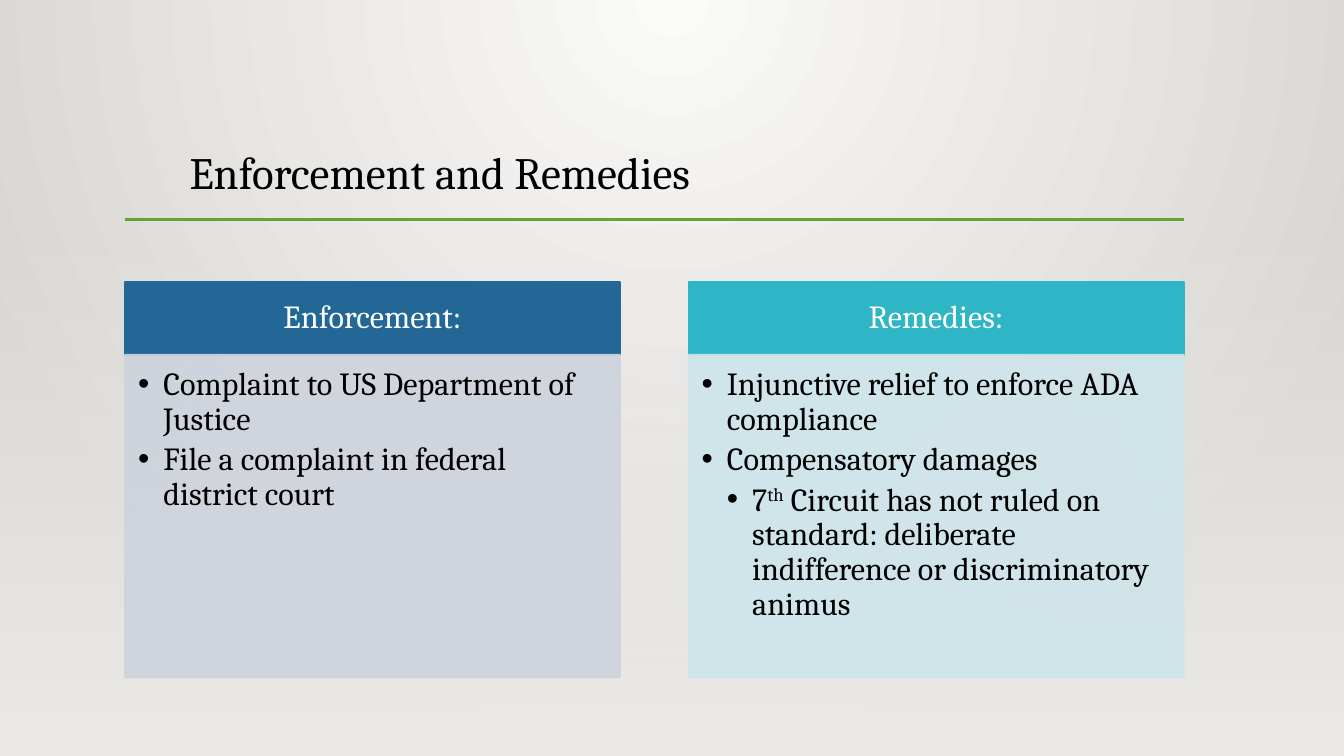
import lxml.etree
import pptx
import pptx.chart.data
import pptx.dml.color
import pptx.enum.shapes
import pptx.enum.text
import pptx.oxml.ns
import pptx.util

TITLE = "Enforcement and Remedies"
PANELS = [
    ("Enforcement:", "blue", "pale_blue", [
        (1, [("Complaint to US Department of Justice", False)]),
        (1, [("File a complaint in federal district court", False)]),
    ]),
    ("Remedies:", "teal", "pale_teal", [
        (1, [("Injunctive relief to enforce ADA compliance", False)]),
        (1, [("Compensatory damages", False)]),
        (2, [("7", False), ("th", True),
             (" Circuit has not ruled on standard: deliberate indifference "
              "or discriminatory animus", False)]),
    ]),
]
COLORS = {
    "black": "000000", "white": "FFFFFF", "green": "5FA534",
    "light": "FAFAF9", "grey": "D7D5D2", "floor": "EDEBE7",
    "blue": "236797", "pale_blue": "CDD3DD",
    "teal": "2FB6C6", "pale_teal": "CEE5EA",
}
FONT = "Cambria"
Inches = pptx.util.Inches
ANCHOR = pptx.enum.text.MSO_ANCHOR
ALIGN = pptx.enum.text.PP_ALIGN
WIDTH, HEIGHT = 13.33, 7.5
LEFT, RIGHT, PANEL_WIDTH = 1.24, 11.74, 4.91
HEAD_TOP, HEAD_HEIGHT, BODY_HEIGHT = 2.8, 0.72, 3.2
BULLET_INDENT = 0.25


def rgb(name):
    return pptx.dml.color.RGBColor.from_string(COLORS[name])


def add_tag(parent, tag, **attributes):
    return lxml.etree.SubElement(parent, pptx.oxml.ns.qn(tag), attributes)


def set_alpha(color_element, percent):
    add_tag(color_element, "a:alpha", val=str(percent * 1000))


def color_elements(parent):
    return list(parent.iter(pptx.oxml.ns.qn("a:srgbClr")))


def paint_gradient(fill, parent, start, end, radial):
    fill.gradient()
    for stop, name, position in zip(fill.gradient_stops, (start, end), (0, 1)):
        stop.color.rgb = rgb(name)
        stop.position = position
    if not radial:
        fill.gradient_angle = 270
        return
    gradient = next(parent.iter(pptx.oxml.ns.qn("a:gradFill")))
    gradient.remove(gradient.find(pptx.oxml.ns.qn("a:lin")))
    circle = add_tag(gradient, "a:path", path="circle")
    add_tag(circle, "a:fillToRect", l="43000", t="0", r="43000", b="100000")


def add_rectangle(page, left, top, width, height):
    box = page.shapes.add_shape(
        pptx.enum.shapes.MSO_SHAPE.RECTANGLE,
        Inches(left), Inches(top), Inches(width), Inches(height))
    box.shadow.inherit = False
    box.line.fill.background()
    return box


def add_panel(page, left, top, height, color, alpha=100):
    box = add_rectangle(page, left, top, PANEL_WIDTH, height)
    box.fill.solid()
    box.fill.fore_color.rgb = rgb(color)
    box.line.color.rgb = rgb(color)
    box.line.width = pptx.util.Pt(1.25)
    if alpha < 100:
        for element in color_elements(box.element.spPr):
            set_alpha(element, alpha)
    return box


def set_frame(box, anchor, insets):
    frame = box.text_frame
    frame.word_wrap = True
    frame.vertical_anchor = anchor
    (frame.margin_left, frame.margin_top,
     frame.margin_right, frame.margin_bottom) = map(Inches, insets)
    return frame


def write(para, text, size=23, color="black", align=ALIGN.LEFT, superscript=False):
    para.alignment = align
    para.line_spacing = 0.9
    span = para.add_run()
    span.text = text
    span.font.name = FONT
    span.font.size = pptx.util.Pt(size)
    span.font.color.rgb = rgb(color)
    if superscript:
        span.font._element.set("baseline", "30000")


def write_bullets(frame, items):
    for index, (level, spans) in enumerate(items):
        para = frame.add_paragraph() if index else frame.paragraphs[0]
        para.level = level
        para.space_after = pptx.util.Pt(4)
        for text, superscript in spans:
            write(para, text, superscript=superscript)
        properties = para._p.get_or_add_pPr()
        properties.set("marL", str(Inches(BULLET_INDENT * level)))
        properties.set("indent", str(-Inches(BULLET_INDENT)))
        add_tag(properties, "a:buFont", typeface="Arial")
        add_tag(properties, "a:buChar", char="•")


def main():
    """Build the slide on enforcement and remedies."""
    deck = pptx.Presentation()
    deck.slide_width, deck.slide_height = Inches(WIDTH), Inches(HEIGHT)
    page = deck.slides.add_slide(deck.slide_layouts[6])
    paint_gradient(page.background.fill, page.element, "light", "grey", True)

    backdrop = add_rectangle(page, 0, 0, WIDTH, HEIGHT)
    paint_gradient(backdrop.fill, backdrop.element, "light", "grey", True)

    title = page.shapes.add_textbox(
        Inches(1.68), Inches(0.88), Inches(10.41), Inches(1.15))
    frame = set_frame(title, ANCHOR.BOTTOM, (0.2, 0.05, 0.1, 0.05))
    write(frame.paragraphs[0], TITLE, size=32)

    rule = page.shapes.add_connector(
        pptx.enum.shapes.MSO_CONNECTOR.STRAIGHT,
        Inches(LEFT), Inches(2.18), Inches(RIGHT), Inches(2.18))
    rule.line.color.rgb = rgb("green")
    rule.line.width = pptx.util.Pt(2.5)
    add_tag(rule._element.spPr, "a:effectLst")

    floor = add_rectangle(page, 0, 2.21, WIDTH, HEIGHT - 2.21)
    paint_gradient(floor.fill, floor.element, "floor", "floor", False)
    set_alpha(color_elements(floor.element.spPr)[0], 0)

    step = RIGHT - PANEL_WIDTH - LEFT
    for index, (heading, dark, pale, items) in enumerate(PANELS):
        left = LEFT + index * step
        head = add_panel(page, left, HEAD_TOP, HEAD_HEIGHT, dark)
        frame = set_frame(head, ANCHOR.MIDDLE, (0.18, 0.1, 0.18, 0.1))
        write(frame.paragraphs[0], heading, color="white", align=ALIGN.CENTER)
        body = add_panel(page, left, HEAD_TOP + HEAD_HEIGHT, BODY_HEIGHT, pale, 90)
        frame = set_frame(body, ANCHOR.TOP, (0.13, 0.13, 0.18, 0.2))
        write_bullets(frame, items)

    deck.save("out.pptx")


if __name__ == "__main__":
    main()
